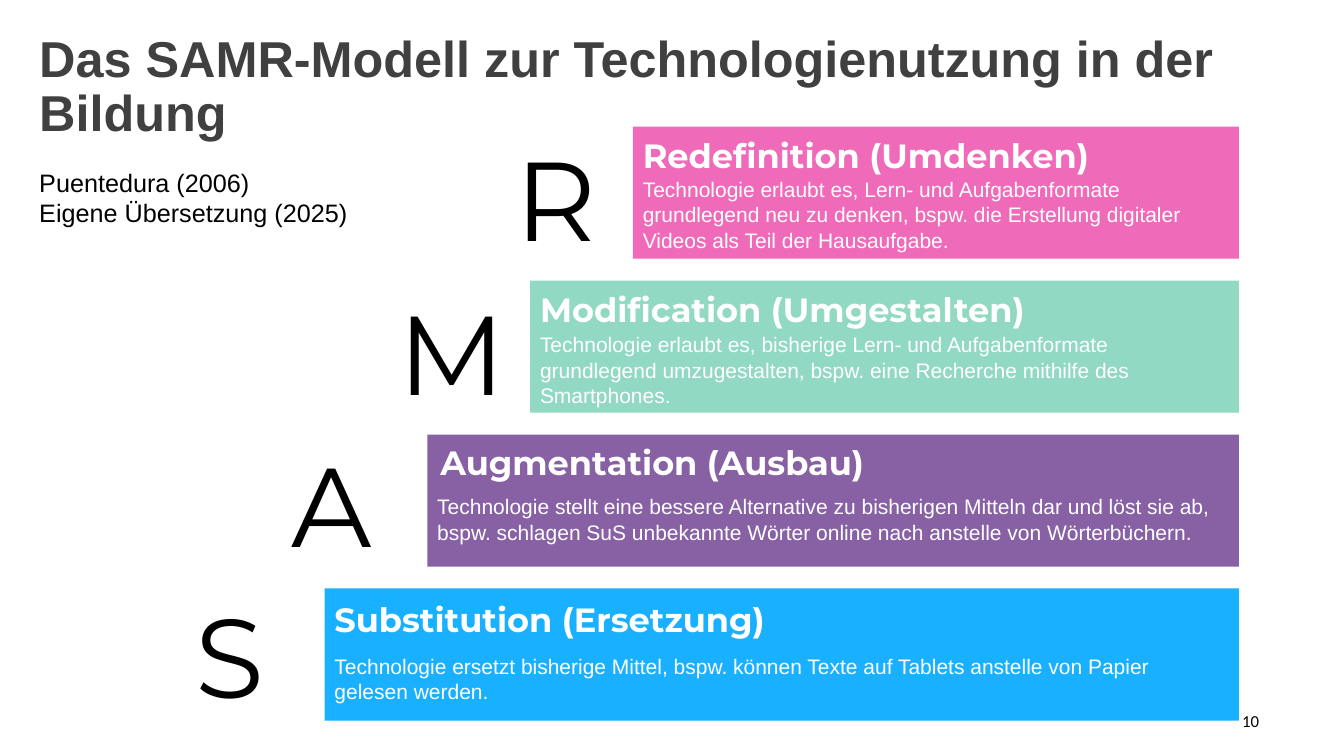
import pptx
import pptx.util
import pptx.dml.color
import pptx.enum.shapes
import pptx.enum.text

Cm = pptx.util.Cm
Align = pptx.enum.text.PP_ALIGN
Anchor = pptx.enum.text.MSO_ANCHOR
HUES = {
    "blue": "18B0FF",
    "plum": "8861A4",
    "mint": "91D9C2",
    "pink": "EF6AB8",
    "white": "FFFFFF",
    "black": "000000",
    "grey": "404040",
}

deck = pptx.Presentation()
deck.slide_width = Cm(33.87)
deck.slide_height = Cm(19.05)
slide = deck.slides.add_slide(deck.slide_layouts[6])


def color(name):
    return pptx.dml.color.RGBColor.from_string(HUES[name])


def write(text, left, top, width, height, size, font="Arial", hue="white",
          bold=False, align=Align.LEFT, anchor=Anchor.TOP, lead=None):
    box = slide.shapes.add_textbox(Cm(left), Cm(top), Cm(width), Cm(height))
    frame = box.text_frame
    frame.word_wrap = True
    frame.vertical_anchor = anchor
    frame.text = text
    for para in frame.paragraphs:
        para.alignment = align
        para.line_spacing = lead
        para.font.size = pptx.util.Pt(size)
        para.font.name = font
        para.font.bold = bold
        para.font.color.rgb = color(hue)


write("Das SAMR-Modell zur Technologienutzung in der Bildung",
      0.74, 0.64, 33.4, 3.18, 36, hue="grey", bold=True,
      anchor=Anchor.MIDDLE, lead=0.9)
write("Puentedura (2006)\nEigene Übersetzung (2025)",
      0.74, 4.09, 8.41, 1.78, 18, hue="black")

steps = [
    ("S", "Substitution (Ersetzung)",
     "Technologie ersetzt bisherige Mittel, bspw. können Texte auf Tablets "
     "anstelle von Papier gelesen werden.",
     "blue", 4.67, -0.18, 0, 0.13, 1.52, 30.91),
    ("A", "Augmentation (Ausbau)",
     "Technologie stellt eine bessere Alternative zu bisherigen Mitteln dar "
     "und löst sie ab, bspw. schlagen SuS unbekannte Wörter online nach "
     "anstelle von Wörterbüchern.",
     "plum", 7.09, -0.1, 0.08, 0.05, 1.37, 30.91),
    ("M", "Modification (Umgestalten)",
     "Technologie erlaubt es, bisherige Lern- und Aufgabenformate "
     "grundlegend umzugestalten, bspw. eine Recherche mithilfe des "
     "Smartphones.",
     "mint", 9.8, -0.05, 0, 0.08, 1.17, 30.91),
    ("R", "Redefinition (Umdenken)",
     "Technologie erlaubt es, Lern- und Aufgabenformate grundlegend neu zu "
     "denken, bspw. die Erstellung digitaler Videos als Teil der "
     "Hausaufgabe.",
     "pink", 12.73, -0.05, 0, 0.08, 1.14, 31.22),
]
right = 31.22
for i, (mark, head, body, hue, x, rise, shift, drop, gap, end) in enumerate(steps):
    left = 8.18 + 2.59 * i
    top = 14.83 - 3.88 * i
    bar = slide.shapes.add_shape(
        pptx.enum.shapes.MSO_SHAPE.RECTANGLE,
        Cm(left), Cm(top), Cm(right - left), Cm(3.33))
    bar.shadow.inherit = False
    bar.fill.solid()
    bar.fill.fore_color.rgb = color(hue)
    bar.line.fill.background()
    write(mark, x, top + rise, 3.23, 3.68, 80, font="Montserrat", hue="black")
    write(head, left + shift, top + drop, 16.2, 1.27, 24,
          font="Montserrat", bold=True)
    write(body, left, top + gap, end - left, 1.52, 15)

write("10", 24.36, 17.65, 7.62, 1.02, 12, font="Calibri", hue="black",
      align=Align.RIGHT, anchor=Anchor.MIDDLE)

deck.save("out.pptx")
